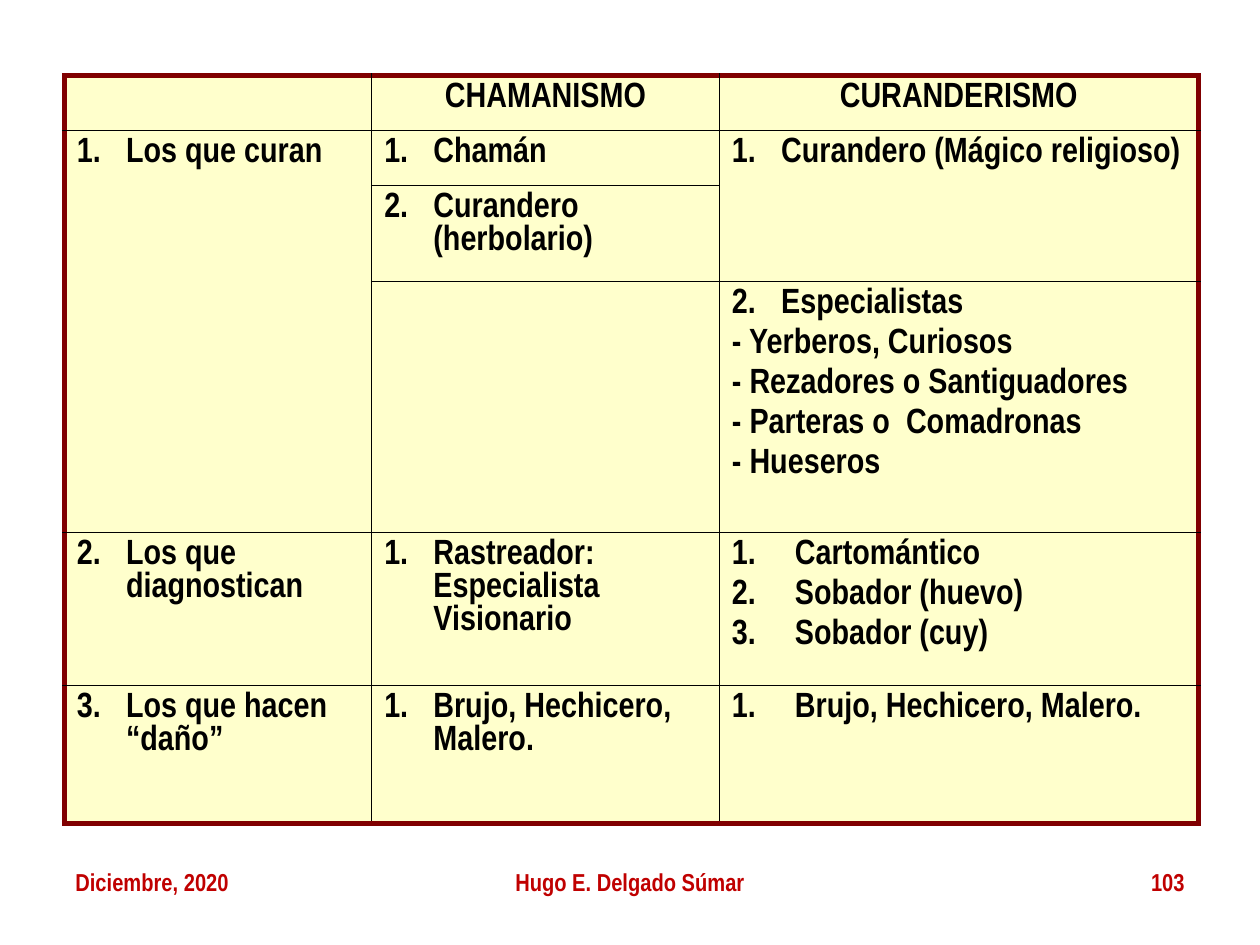
from dataclasses import dataclass

from lxml.etree import SubElement
from pptx import Presentation
from pptx.dml.color import RGBColor
from pptx.enum.text import PP_ALIGN
from pptx.oxml.ns import qn
from pptx.util import Pt

BLACK = RGBColor(0x00, 0x00, 0x00)
MAROON = RGBColor(0x80, 0x00, 0x00)
RED = RGBColor(0xC0, 0x00, 0x00)
CREAM = RGBColor(0xFF, 0xFF, 0xCC)
FONT = "Arial Narrow"
HANGING = 28.08

COLUMN_WIDTHS = [175.68, 198.72, 273.6]
ROW_HEIGHTS = [31.4, 31.4, 54.9, 143.4, 87.4, 78.9]


@dataclass
class Entry:
    row: int
    column: int
    lines: list[str]
    hanging_lines: int = 1
    row_span: int = 1
    align: PP_ALIGN = PP_ALIGN.LEFT


@dataclass
class Footer:
    text: str
    left: float
    width: float
    align: PP_ALIGN


ENTRIES = [
    Entry(0, 1, ["CHAMANISMO"], 0, align=PP_ALIGN.CENTER),
    Entry(0, 2, ["CURANDERISMO"], 0, align=PP_ALIGN.CENTER),
    Entry(1, 0, ["1.\tLos que curan"], row_span=3),
    Entry(1, 1, ["1.\tChamán"]),
    Entry(1, 2, ["1.\tCurandero (Mágico religioso)"], row_span=2),
    Entry(2, 1, ["2.\tCurandero (herbolario)"]),
    Entry(3, 2, ["2.\tEspecialistas", "- Yerberos, Curiosos",
                 "- Rezadores o Santiguadores", "- Parteras o  Comadronas",
                 "- Hueseros"]),
    Entry(4, 0, ["2.\tLos que diagnostican"]),
    Entry(4, 1, ["1.\tRastreador: Especialista Visionario"]),
    Entry(4, 2, ["1.\tCartomántico", "2.\tSobador (huevo)", "3.\tSobador (cuy)"], 0),
    Entry(5, 0, ["3.\tLos que hacen “daño”"]),
    Entry(5, 1, ["1.\tBrujo, Hechicero, Malero."]),
    Entry(5, 2, ["1.\tBrujo, Hechicero, Malero."], 0),
]

FOOTERS = [
    Footer("Diciembre, 2020", 36, 168, PP_ALIGN.LEFT),
    Footer("Hugo E. Delgado Súmar", 246, 228, PP_ALIGN.CENTER),
    Footer("103", 516, 168, PP_ALIGN.RIGHT),
]


def format_runs(paragraph, size: float, color: RGBColor) -> None:
    for run in paragraph.runs:
        run.font.name = FONT
        run.font.size = Pt(size)
        run.font.bold = True
        run.font.color.rgb = color


def set_border(cell, side: str, position: int, outer: bool) -> None:
    properties = cell._tc.get_or_add_tcPr()
    line = SubElement(properties, qn(f"a:ln{side}"), w=str(Pt(3 if outer else 1)))
    fill = SubElement(line, qn("a:solidFill"))
    SubElement(fill, qn("a:srgbClr"), val=str(MAROON if outer else BLACK))
    properties.insert(position, line)


def style_cell(cell, row: int, column: int) -> None:
    cell.fill.solid()
    cell.fill.fore_color.rgb = CREAM
    last_row = row + (cell.span_height if cell.is_merge_origin else 1) - 1
    borders = [("L", column == 0), ("R", column == len(COLUMN_WIDTHS) - 1)]
    if not cell.is_spanned:
        borders += [("T", row == 0), ("B", last_row == len(ROW_HEIGHTS) - 1)]
    for position, (side, outer) in enumerate(borders):
        set_border(cell, side, position, outer)


def fill_cell(cell, entry: Entry) -> None:
    cell.text_frame.text = "\n".join(entry.lines)
    for index, paragraph in enumerate(cell.text_frame.paragraphs):
        paragraph.alignment = entry.align
        paragraph.space_before = Pt(4)
        if index < entry.hanging_lines:
            properties = paragraph._p.get_or_add_pPr()
            properties.set("marL", str(Pt(HANGING)))
            properties.set("indent", str(Pt(-HANGING)))
        format_runs(paragraph, 20, BLACK)


def add_healer_table(slide) -> None:
    table = slide.shapes.add_table(
        len(ROW_HEIGHTS), len(COLUMN_WIDTHS), Pt(36.72), Pt(43.2),
        Pt(sum(COLUMN_WIDTHS)), Pt(sum(ROW_HEIGHTS))).table
    table.first_row = False
    table.horz_banding = False
    for column, width in zip(table.columns, COLUMN_WIDTHS):
        column.width = Pt(width)
    for row, height in zip(table.rows, ROW_HEIGHTS):
        row.height = Pt(height)
    for entry in ENTRIES:
        cell = table.cell(entry.row, entry.column)
        if entry.row_span > 1:
            cell.merge(table.cell(entry.row + entry.row_span - 1, entry.column))
        fill_cell(cell, entry)
    for row in range(len(ROW_HEIGHTS)):
        for column in range(len(COLUMN_WIDTHS)):
            style_cell(table.cell(row, column), row, column)


def add_footer(slide, footer: Footer) -> None:
    shape = slide.shapes.add_textbox(
        Pt(footer.left), Pt(491.76), Pt(footer.width), Pt(37.44))
    shape.text_frame.word_wrap = True
    shape.text_frame.text = footer.text
    paragraph = shape.text_frame.paragraphs[0]
    paragraph.alignment = footer.align
    format_runs(paragraph, 14, RED)


def main() -> None:
    presentation = Presentation()
    presentation.slide_width = Pt(720)
    presentation.slide_height = Pt(540)
    slide = presentation.slides.add_slide(presentation.slide_layouts[6])

    # Comparison table
    add_healer_table(slide)

    # Footer: date, author and page number
    for footer in FOOTERS:
        add_footer(slide, footer)

    presentation.save("out.pptx")


if __name__ == "__main__":
    main()
